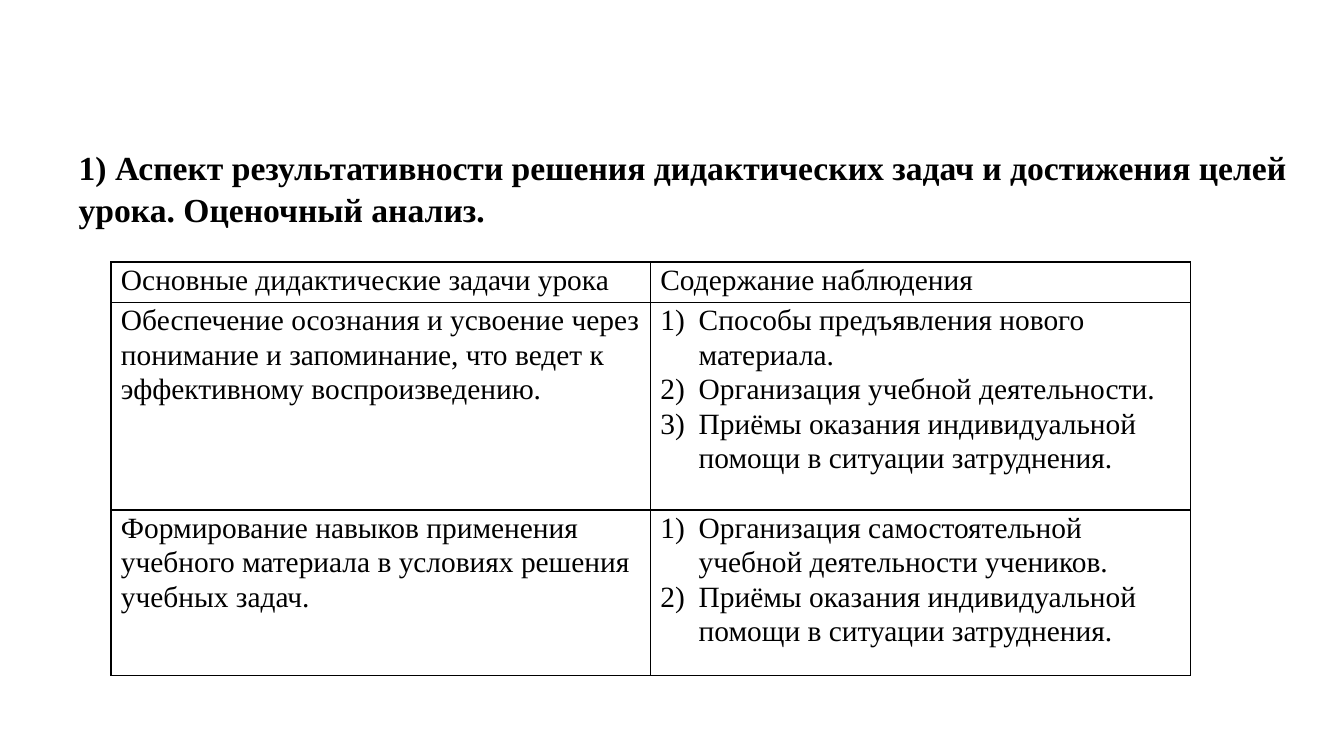
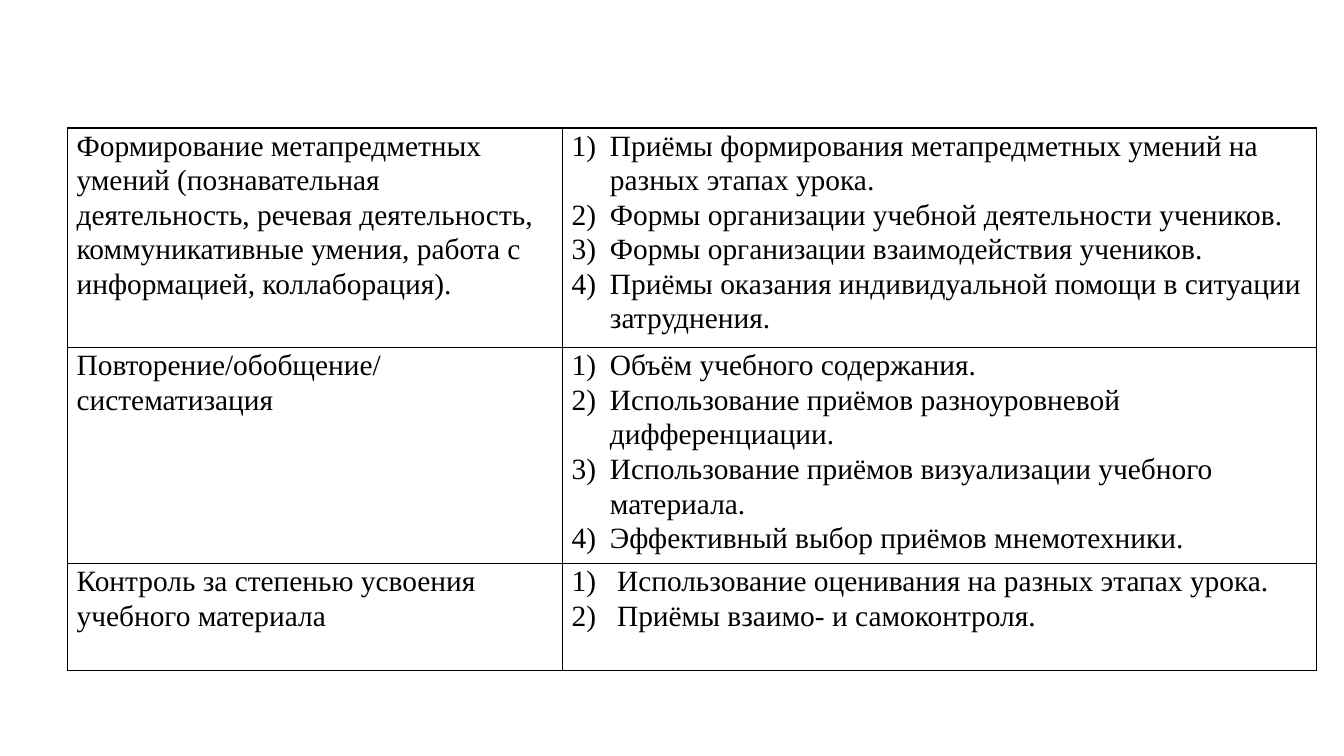
from dataclasses import dataclass
from typing import Any

from lxml import etree
from pptx import Presentation, util as u
from pptx.dml.color import RGBColor
from pptx.enum import text
from pptx.oxml import ns

PX = 9144  # 100 px to the inch
BLACK, WHITE = "000000", "FFFFFF"
BORDER_WIDTH = 12700
TITLE_FONT = {"name": "Times New Roman", "size": u.Pt(24), "bold": True}
CELL_FONT = {"name": "Times New Roman", "size": u.Pt(21), "bold": False}
LINE_SPACING = 1.06


@dataclass(frozen=True)
class Task:
    name: str
    observations: tuple[str, ...]
    height: int
    numbered: bool = True
    hanging: int = 38


@dataclass(frozen=True)
class TaskTable:
    left: int
    top: int
    columns: tuple[int, int]
    margin: int
    tasks: tuple[Task, ...]


TITLE = ("1) Аспект результативности решения дидактических задач и достижения "
         "целей урока. Оценочный анализ.")
HELP = "Приёмы оказания индивидуальной помощи в ситуации затруднения."

MAIN_TASKS = TaskTable(110, 260, (535, 536), 10, (
    Task("Основные дидактические задачи урока",
         ("Содержание наблюдения",), 40, numbered=False),
    Task("Обеспечение осознания и усвоение через понимание и запоминание, "
         "что ведет к эффективному воспроизведению.",
         ("Способы предъявления нового материала.",
          "Организация учебной деятельности.",
          HELP), 206),
    Task("Формирование навыков применения учебного материала в условиях "
         "решения учебных задач.",
         ("Организация самостоятельной учебной деятельности учеников.",
          HELP), 164),
))

FURTHER_TASKS = TaskTable(67, 127, (491, 748), 9, (
    Task("Формирование метапредметных умений (познавательная деятельность, "
         "речевая деятельность, коммуникативные умения, работа с информацией, "
         "коллаборация).",
         ("Приёмы формирования метапредметных умений на разных этапах урока.",
          "Формы организации учебной деятельности учеников.",
          "Формы организации взаимодействия учеников.",
          HELP), 218),
    Task("Повторение/обобщение/систематизация",
         ("Объём учебного содержания.",
          "Использование приёмов разноуровневой дифференциации.",
          "Использование приёмов визуализации учебного материала.",
          "Эффективный выбор приёмов мнемотехники."), 214),
    Task("Контроль за степенью усвоения учебного материала",
         ("Использование оценивания на разных этапах урока.",
          "Приёмы взаимо- и самоконтроля."), 106, hanging=45),
))


def px(length: int) -> int:
    return u.Emu(length * PX)


def colour(value: str) -> RGBColor:
    return RGBColor.from_string(value)


def set_values(target: Any, values: dict[str, Any]) -> None:
    for name, value in values.items():
        setattr(target, name, value)


def format_paragraph(paragraph: Any, font: dict[str, Any]) -> None:
    set_values(paragraph, {"alignment": text.PP_ALIGN.LEFT,
                           "line_spacing": LINE_SPACING})
    set_values(paragraph.font, font)
    paragraph.font.color.rgb = colour(BLACK)


def add_number(paragraph: Any, hanging: int) -> None:
    """Number the paragraph as 1), 2), ... with a hanging indent."""
    properties = paragraph._p.get_or_add_pPr()
    properties.set("marL", str(px(hanging)))
    properties.set("indent", str(-px(hanging)))
    number = etree.SubElement(properties, ns.qn("a:buAutoNum"))
    number.set("type", "arabicParenR")


def add_borders(cell: Any) -> None:
    properties = cell._tc.get_or_add_tcPr()
    for side in ("lnL", "lnR", "lnT", "lnB"):
        line = etree.SubElement(properties, ns.qn(f"a:{side}"), w=str(BORDER_WIDTH))
        fill = etree.SubElement(line, ns.qn("a:solidFill"))
        etree.SubElement(fill, ns.qn("a:srgbClr"), val=BLACK)


def fill_cell(cell: Any, lines: tuple[str, ...], margin: int, hanging: int = 0) -> None:
    """Write the lines into the cell, numbered where a hanging indent is given."""
    add_borders(cell)
    cell.fill.solid()
    cell.fill.fore_color.rgb = colour(WHITE)
    set_values(cell, {"margin_left": px(margin), "margin_right": px(margin),
                      "margin_top": 0, "margin_bottom": 0})
    frame = cell.text_frame
    for index, line in enumerate(lines):
        paragraph = frame.add_paragraph() if index else frame.paragraphs[0]
        paragraph.text = line
        if hanging:
            add_number(paragraph, hanging)
        format_paragraph(paragraph, CELL_FONT)
    paragraph.space_after = u.Pt(8)


def add_task_table(slide: Any, content: TaskTable) -> None:
    tasks = content.tasks
    height = sum(task.height for task in tasks)
    table = slide.shapes.add_table(
        len(tasks), len(content.columns), px(content.left), px(content.top),
        px(sum(content.columns)), px(height)).table
    set_values(table, {"first_row": False, "horz_banding": False})
    for column, width in zip(table.columns, content.columns):
        column.width = px(width)
    for row, task in zip(table.rows, tasks):
        row.height = px(task.height)
        name_cell, observation_cell = row.cells
        fill_cell(name_cell, (task.name,), content.margin)
        fill_cell(observation_cell, task.observations, content.margin,
                  task.hanging if task.numbered else 0)


def set_title(slide: Any, title: str) -> None:
    shape = slide.shapes.title
    set_values(shape, {"left": px(68), "top": px(138),
                       "width": px(1228), "height": px(91)})
    frame = shape.text_frame
    frame.text = title
    set_values(frame, {"word_wrap": True, "auto_size": text.MSO_AUTO_SIZE.NONE,
                       "vertical_anchor": text.MSO_ANCHOR.TOP})
    format_paragraph(frame.paragraphs[0], TITLE_FONT)


def main() -> None:
    presentation = Presentation()
    set_values(presentation, {"slide_width": px(1333), "slide_height": px(750)})
    title_only, blank = presentation.slide_layouts[5], presentation.slide_layouts[6]

    main_slide = presentation.slides.add_slide(title_only)
    set_title(main_slide, TITLE)
    add_task_table(main_slide, MAIN_TASKS)

    further_slide = presentation.slides.add_slide(blank)
    add_task_table(further_slide, FURTHER_TASKS)
    presentation.save("out.pptx")


if __name__ == "__main__":
    main()
